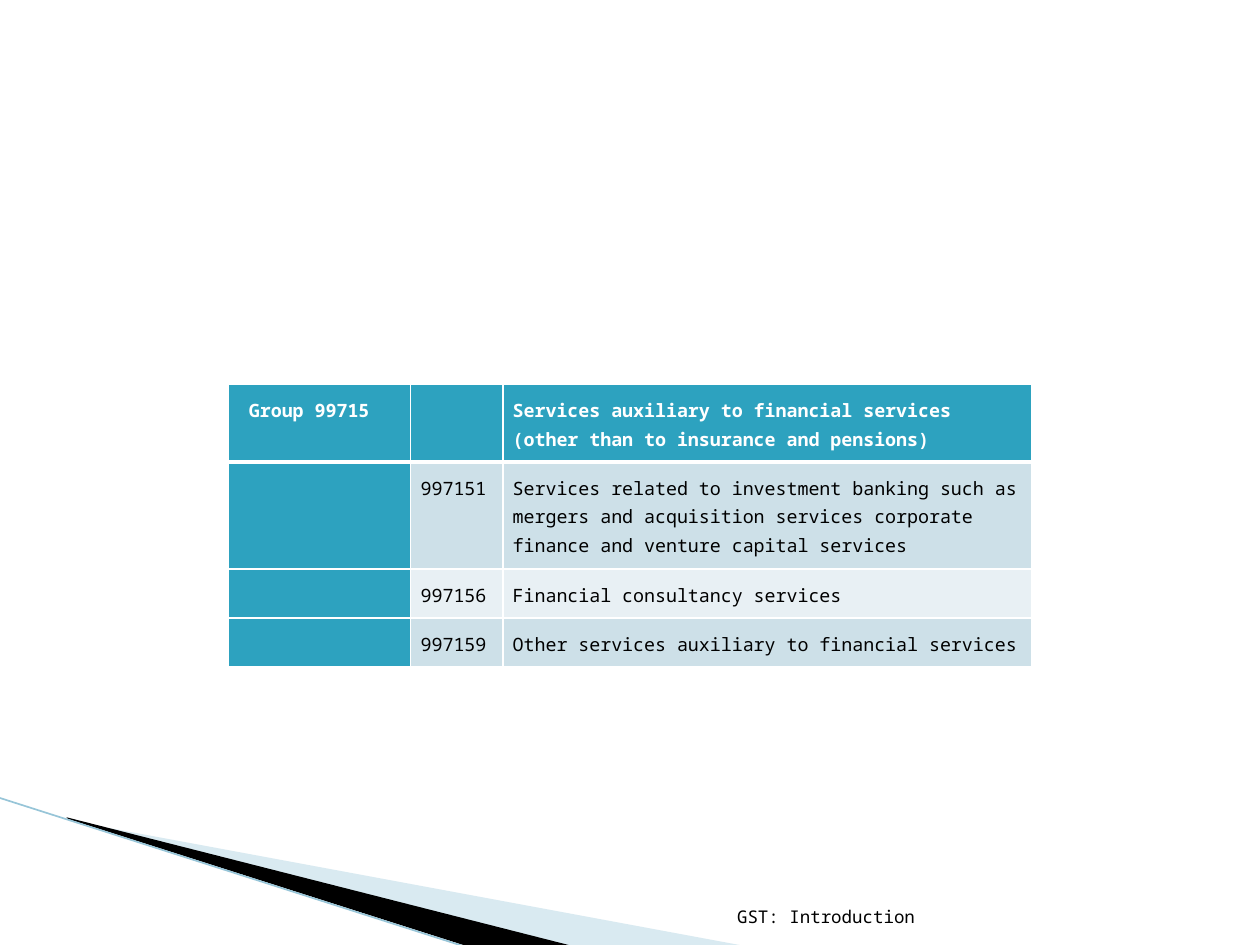
from dataclasses import dataclass

from lxml.etree import SubElement
from pptx import Presentation
from pptx.dml.color import RGBColor
from pptx.enum.shapes import MSO_CONNECTOR
from pptx.enum.text import MSO_ANCHOR, PP_ALIGN
from pptx.oxml.ns import qn
from pptx.util import Pt


@dataclass(frozen=True)
class Theme:
    font: str = "Noto Sans Mono"
    table_size: float = 10.5
    footer_size: float = 10
    accent: str = "2DA2BF"
    band_dark: str = "CDE0E8"
    band_light: str = "E8F0F4"
    wedge: str = "A0CBDC"
    edge: str = "97C5D8"
    white: str = "FFFFFF"
    black: str = "000000"


@dataclass(frozen=True)
class Wedge:
    points: tuple[tuple[float, float], ...]
    color: str
    opacity: int = 100


THEME = Theme()

WEDGES = (
    Wedge(((39.6, 468.7), (428.4, 540.7), (328.3, 540.7), (39.6, 468)),
          THEME.wedge, 40),
    Wedge(((38.2, 467.3), (329, 540.7), (267.8, 541.4), (38.9, 468)),
          THEME.black),
)

COLUMN_WIDTHS = (104.4, 52.6, 302.5)
ROW_HEIGHTS = (44.5, 61, 28, 28)
SERVICE_CODES = (
    ("\u00a0Group 99715", "",
     "Services auxiliary to financial services (other than to insurance and pensions)"),
    ("", "997151",
     "Services related to investment banking such as mergers and acquisition "
     "services corporate finance and venture capital services"),
    ("", "997156", "Financial consultancy services"),
    ("", "997159", "Other services auxiliary to financial services"),
)


def write(frame, text: str, *, size: float, color: str, bold: bool = False,
          align=PP_ALIGN.LEFT, line_spacing: float = 1.0) -> None:
    paragraph = frame.paragraphs[0]
    paragraph.alignment = align
    paragraph.line_spacing = line_spacing
    if not text:
        # An empty cell still needs its type size, or the row grows.
        SubElement(paragraph._p, qn("a:endParaRPr"), sz=str(int(size * 100)))
        return
    run = paragraph.add_run()
    run.text = text
    run.font.name = THEME.font
    run.font.size = Pt(size)
    run.font.bold = bold
    run.font.color.rgb = RGBColor.from_string(color)


def draw_wedge(slide, wedge: Wedge) -> None:
    start, *rest = wedge.points
    builder = slide.shapes.build_freeform(*start, scale=Pt(1))
    builder.add_line_segments(rest, close=True)
    shape = builder.convert_to_shape()
    shape.shadow.inherit = False
    shape.line.fill.background()
    shape.fill.solid()
    shape.fill.fore_color.rgb = RGBColor.from_string(wedge.color)
    if wedge.opacity < 100:
        color = shape._element.spPr.find(qn("a:solidFill"))[0]
        SubElement(color, qn("a:alpha"), val=str(wedge.opacity * 1000))


def draw_edge(slide) -> None:
    edge = slide.shapes.add_connector(
        MSO_CONNECTOR.STRAIGHT, Pt(-0.7), Pt(455.8), Pt(267.1), Pt(541.4))
    edge.line.color.rgb = RGBColor.from_string(THEME.edge)
    edge.line.width = Pt(0.95)
    SubElement(edge._element.spPr, qn("a:effectLst"))


def set_borders(cell, **widths: float) -> None:
    """Draw white borders; the keywords must come in the order L, R, T, B."""
    properties = cell._tc.get_or_add_tcPr()
    for side, width in widths.items():
        border = SubElement(properties, qn(f"a:ln{side}"), w=str(Pt(width)))
        fill = SubElement(border, qn("a:solidFill"))
        SubElement(fill, qn("a:srgbClr"), val=THEME.white)


def cell_fill(row: int, column: int) -> str:
    if row == 0 or column == 0:
        return THEME.accent
    return THEME.band_dark if row % 2 else THEME.band_light


def draw_service_table(slide) -> None:
    table = slide.shapes.add_table(
        len(ROW_HEIGHTS), len(COLUMN_WIDTHS), Pt(130.3), Pt(219.6),
        Pt(sum(COLUMN_WIDTHS)), Pt(sum(ROW_HEIGHTS))).table
    for column, width in zip(table.columns, COLUMN_WIDTHS):
        column.width = Pt(width)
    for row, height in zip(table.rows, ROW_HEIGHTS):
        row.height = Pt(height)
    for r, texts in enumerate(SERVICE_CODES):
        for c, text in enumerate(texts):
            cell = table.cell(r, c)
            cell.margin_left = cell.margin_right = Pt(5.7)
            cell.margin_top = cell.margin_bottom = Pt(5.7)
            set_borders(cell, L=1, R=1, T=3 if r == 1 else 1, B=3 if r == 0 else 1)
            cell.fill.solid()
            cell.fill.fore_color.rgb = RGBColor.from_string(cell_fill(r, c))
            write(cell.text_frame, text, size=THEME.table_size, bold=r == 0,
                  color=THEME.white if r == 0 else THEME.black,
                  line_spacing=1.15)


def draw_footer(slide) -> None:
    frame = slide.shapes.add_textbox(
        Pt(344.9), Pt(504.7), Pt(185), Pt(28.8)).text_frame
    frame.word_wrap = True
    frame.vertical_anchor = MSO_ANCHOR.BOTTOM
    write(frame, "GST: Introduction", size=THEME.footer_size,
          color=THEME.black, align=PP_ALIGN.RIGHT)


def main() -> None:
    presentation = Presentation()
    presentation.slide_width, presentation.slide_height = Pt(720), Pt(540)
    slide = presentation.slides.add_slide(presentation.slide_layouts[6])
    for wedge in WEDGES:
        draw_wedge(slide, wedge)
    draw_edge(slide)
    draw_service_table(slide)
    draw_footer(slide)
    presentation.save("out.pptx")


if __name__ == "__main__":
    main()
